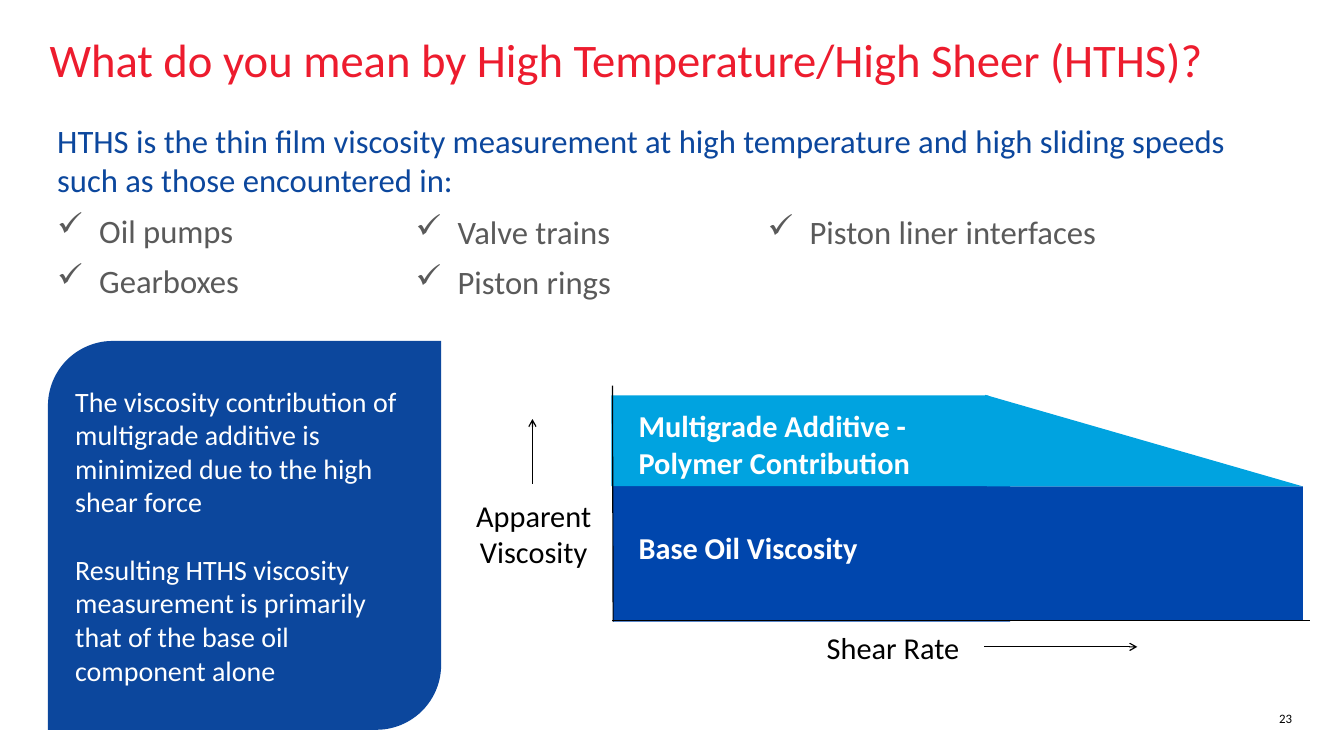
import pptx
import pptx.dml.color
import pptx.enum.shapes
import pptx.enum.text
import pptx.oxml.ns
import pptx.util
from lxml import etree

Cm, Pt = pptx.util.Cm, pptx.util.Pt
SHAPE = pptx.enum.shapes.MSO_SHAPE
ALIGN = pptx.enum.text.PP_ALIGN
ANCHOR = pptx.enum.text.MSO_ANCHOR
qn = pptx.oxml.ns.qn

RED, NAVY, BLUE, SKY = "ED1C2E", "0C479D", "0046AD", "00A3E0"
GREY, BLACK, WHITE = "5A5A5A", "000000", "FFFFFF"
CHECK_INDENT = Cm(1.27)
LIST_GAP = Pt(9.6)


def color(hex_code):
    return pptx.dml.color.RGBColor.from_string(hex_code)


def set_all(target, values):
    for name, value in values.items():
        setattr(target, name, value)


def write(frame, lines, size, hex_code, bold=False, align=ALIGN.LEFT, gap=0, checks=False):
    """Add each line as a paragraph; the frame's first paragraph has no space before."""
    for line in lines:
        first = not frame.text
        paragraph = frame.paragraphs[0] if first else frame.add_paragraph()
        paragraph.alignment = align
        if not first:
            paragraph.space_before = gap
        if checks:
            props = paragraph._p.get_or_add_pPr()
            props.set("marL", str(CHECK_INDENT))
            props.set("indent", str(-CHECK_INDENT))
            etree.SubElement(props, qn("a:buChar")).set("char", "✓")
        run = paragraph.add_run()
        run.text = line
        set_all(run.font, {"name": "Calibri", "size": Pt(size), "bold": bold})
        run.font.color.rgb = color(hex_code)


def add_text(slide, box, insets=(0, 0)):
    frame = slide.shapes.add_textbox(*map(Cm, box)).text_frame
    side, end = map(Cm, insets)
    set_all(frame, {"word_wrap": True, "margin_left": side, "margin_right": side,
                    "margin_top": end, "margin_bottom": end})
    return frame


def paint(shape, hex_code):
    shape.shadow.inherit = False
    shape.fill.solid()
    shape.fill.fore_color.rgb = color(hex_code)
    shape.line.fill.background()


def add_block(slide, kind, box, hex_code):
    block = slide.shapes.add_shape(kind, *map(Cm, box))
    paint(block, hex_code)
    return block


def add_line(slide, start, end, arrow=False):
    line = slide.shapes.add_connector(
        pptx.enum.shapes.MSO_CONNECTOR.STRAIGHT, *map(Cm, start + end))
    line.line.width = Pt(1)
    line.line.color.rgb = color(BLACK)
    if arrow:
        etree.SubElement(line.line._get_or_add_ln(), qn("a:tailEnd")).set("type", "arrow")
    etree.SubElement(line._element.spPr, qn("a:effectLst"))


def add_heading(slide, box):
    write(add_text(slide, box), ["What do you mean by High Temperature/High Sheer (HTHS)?"],
          40, RED)


def add_page_number(slide, box):
    write(add_text(slide, box), ["23"], 11, BLACK, align=ALIGN.RIGHT)


def add_examples(slide, box):
    left, top, width, height = box
    checklist = {"gap": LIST_GAP, "checks": True}

    # Definition and first column
    intro = add_text(slide, box, (0, 0.2))
    write(intro, ["HTHS is the thin film viscosity measurement at high temperature and "
                  "high sliding speeds such as those encountered in:"], 28, NAVY)
    write(intro, ["Oil pumps", "Gearboxes"], 28, GREY, **checklist)

    # Second and third columns
    for offset, items in ((10.59, ["Valve trains", "Piston rings"]),
                          (21.23, ["Piston liner interfaces"])):
        column = add_text(slide, (left + offset, top + 2.82, 11, 1.5 * len(items)), (0.25, 0.13))
        write(column, items, 28, GREY, **checklist)


def add_conclusion(slide, box):
    frame = add_block(slide, SHAPE.ROUND_2_DIAG_RECTANGLE, box, NAVY).text_frame
    set_all(frame, {"word_wrap": True, "vertical_anchor": ANCHOR.MIDDLE})
    write(frame, ["The viscosity contribution of multigrade additive is minimized "
                  "due to the high shear force",
                  "Resulting HTHS viscosity measurement is primarily that of the "
                  "base oil component alone"], 24, WHITE, gap=Pt(29))


def add_viscosity_diagram(slide, box):
    left, top, width, height = box

    def at(x, y, *size):
        return (left + x, top + y, *size)

    def label(place, lines, hex_code, **style):
        write(add_text(slide, place, (0.41, 0.2)), lines, 26, hex_code, **style)

    # Base oil band
    for band in (at(4.85, 2.95, 12.01, 4.19), at(16.16, 3.05, 9.55, 4.06)):
        add_block(slide, SHAPE.RECTANGLE, band, BLUE)

    # Shear rate axis
    add_line(slide, at(4.83, 7.11), at(width, 7.11))
    label(at(10.9, 7.16, 6, 1.35), ["Shear Rate"], BLACK)
    add_line(slide, at(16.08, 7.9), at(20.7, 7.9), arrow=True)

    # Additive band, falling off as shear rises
    add_block(slide, SHAPE.RECTANGLE, at(4.8, 0.3, 11.4, 2.74), SKY)
    corners = [tuple(map(Cm, at(*corner)))
               for corner in ((16.16, 3.05), (25.71, 3.05), (16.1, 0.28))]
    outline = slide.shapes.build_freeform(*corners[0])
    outline.add_line_segments(corners[1:], close=True)
    paint(outline.convert_to_shape(), SKY)

    # Viscosity axis
    add_line(slide, at(4.83, 0), at(4.85, 7.14))
    label(at(0, 3.17, 4.9, 2.31), ["Apparent", "Viscosity"], BLACK, align=ALIGN.CENTER)
    add_line(slide, at(2.41, 2.97), at(2.41, 1.01), arrow=True)

    # Band labels
    label(at(5.21, 0.46, 9.86, 2.31), ["Multigrade Additive - Polymer Contribution"],
          WHITE, bold=True)
    label(at(5.21, 4.14, 8.59, 1.35), ["Base Oil Viscosity"], WHITE, bold=True)


def main():
    deck = pptx.Presentation()
    set_all(deck, {"slide_width": Cm(40.64), "slide_height": Cm(22.86)})
    slide = deck.slides.add_slide(deck.slide_layouts[6])
    add_page_number(slide, (37.77, 21.49, 1.3, 0.58))
    add_examples(slide, (1.73, 3.45, 36.14, 5.94))
    add_viscosity_diagram(slide, (13.69, 11.66, 25.91, 8.51))
    add_heading(slide, (1.5, 0.94, 38.96, 2.54))
    add_conclusion(slide, (1.45, 10.31, 11.89, 11.76))
    deck.save("out.pptx")


if __name__ == "__main__":
    main()
